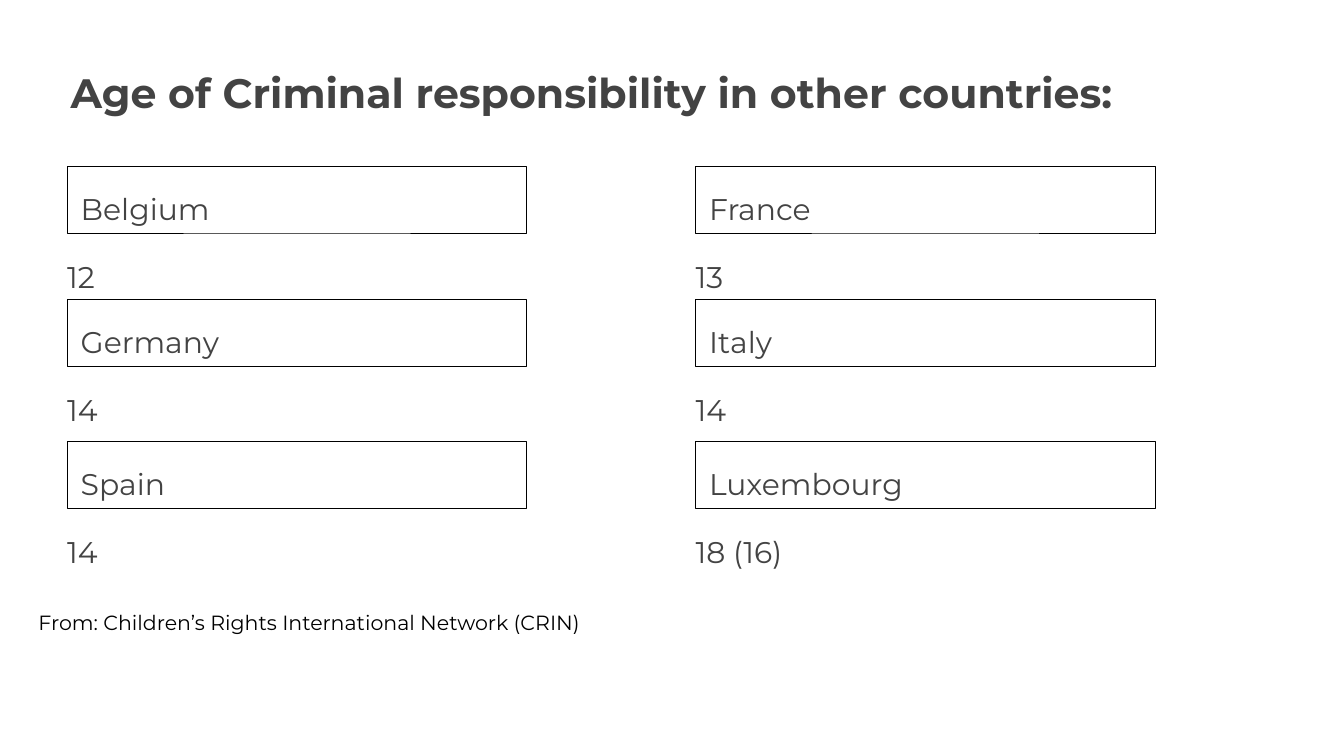
"""Build a slide listing the age of criminal responsibility in six countries."""
from pptx import Presentation
from pptx.dml.color import RGBColor
from pptx.enum.shapes import MSO_SHAPE
from pptx.enum.text import MSO_ANCHOR, MSO_AUTO_SIZE, PP_ALIGN
from pptx.util import Cm, Pt

TITLE = "Age of Criminal responsibility in other countries:"
SOURCE = "From: Children’s Rights International Network (CRIN)"
COUNTRIES = [
    [("Belgium", "12"), ("France", "13")],
    [("Germany", "14"), ("Italy", "14")],
    [("Spain", "14"), ("Luxembourg", "18 (16)")],
]

THEME = {
    "font": "Montserrat",
    "ink": RGBColor(0x43, 0x43, 0x43),
    "black": RGBColor(0, 0, 0),
    "title": Pt(44),
    "body": Pt(32),
    "source": Pt(22),
    "border": Pt(0.75),
}

PAGE_SIZE = Cm(50.8), Cm(28.58)
TITLE_AREA = Cm(2.67), Cm(2.26), Cm(45.47), Cm(9.04)
SOURCE_AREA = Cm(0.94), Cm(22.56), Cm(21.62), Cm(2.01)
COLUMN_LEFTS = Cm(2.54), Cm(26.29)
ROW_TOPS = Cm(6.3), Cm(11.33), Cm(16.7)
COUNTRY_SIZE = Cm(17.37), Cm(2.51)
AGE_SIZE = Cm(21.95), Cm(3.51)
AGE_DROP = Cm(3.08)
PADDING = Cm(0.51)


def set_all(target, values):
    for name, value in values.items():
        setattr(target, name, value)


def write(shape, text, size, color=THEME["ink"], padding=0, bold=False, **spacing):
    frame = shape.text_frame
    frame.text = text
    set_all(frame, {
        "word_wrap": True,
        "auto_size": MSO_AUTO_SIZE.NONE,
        "vertical_anchor": MSO_ANCHOR.TOP,
        "margin_left": padding,
        "margin_top": padding,
        "margin_right": padding,
        "margin_bottom": padding,
    })
    paragraph = frame.paragraphs[0]
    set_all(paragraph, {"alignment": PP_ALIGN.LEFT, **spacing})
    font = paragraph.runs[0].font
    set_all(font, {"name": THEME["font"], "size": size, "bold": bold})
    font.color.rgb = color


def add_country(page, left, top, country, age):
    box = page.shapes.add_shape(MSO_SHAPE.RECTANGLE, left, top, *COUNTRY_SIZE)
    box.shadow.inherit = False
    box.fill.background()
    box.line.color.rgb = THEME["black"]
    box.line.width = THEME["border"]
    write(box, country, THEME["body"], padding=PADDING, line_spacing=1.3)

    age_box = page.shapes.add_textbox(left, top + AGE_DROP, *AGE_SIZE)
    write(age_box, age, THEME["body"], line_spacing=1.3, space_after=Pt(20))


def main():
    deck = Presentation()
    deck.slide_width, deck.slide_height = PAGE_SIZE
    page = deck.slides.add_slide(deck.slide_layouts.get_by_name("Title Only"))

    title = page.shapes.title
    set_all(title, dict(zip(("left", "top", "width", "height"), TITLE_AREA)))
    write(title, TITLE, THEME["title"], bold=True, line_spacing=1.15)

    for top, row in zip(ROW_TOPS, COUNTRIES):
        for left, (country, age) in zip(COLUMN_LEFTS, row):
            add_country(page, left, top, country, age)

    source = page.shapes.add_textbox(*SOURCE_AREA)
    write(source, SOURCE, THEME["source"], THEME["black"], PADDING)
    deck.save("out.pptx")


if __name__ == "__main__":
    main()
